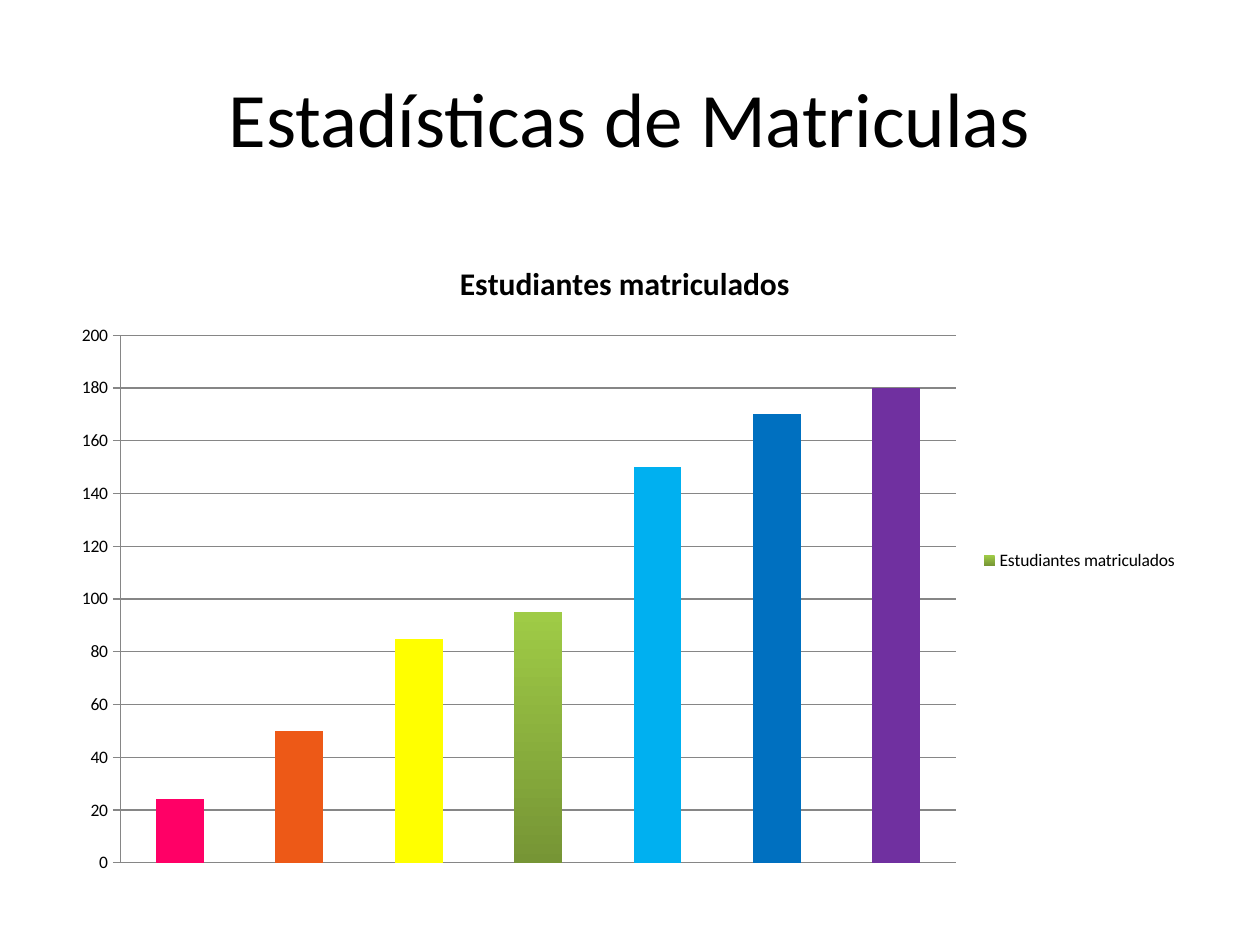
import pptx
import pptx.chart.data
import pptx.dml.color
import pptx.enum.chart
import pptx.enum.text
import pptx.util
from pptx.util import Inches

COLORS = {
    "text": "000000", "grid": "868686",
    "green_top": "9FCB46", "green_bottom": "769535",
    "pink": "FF0066", "orange": "ED5917", "yellow": "FFFF00",
    "sky": "00B0F0", "blue": "0070C0", "purple": "7030A0",
}
FONT = "Calibri"
SERIES = "Estudiantes matriculados"
# Enrolled students and bar colour; None keeps the green gradient of the series
BARS = [(24, "pink"), (50, "orange"), (85, "yellow"), (95, None),
        (150, "sky"), (170, "blue"), (180, "purple")]


def rgb(name):
    return pptx.dml.color.RGBColor.from_string(COLORS[name])


def write(frame, text, size, bold=False, align=pptx.enum.text.PP_ALIGN.CENTER):
    paragraph = frame.paragraphs[0]
    paragraph.alignment = align
    run = paragraph.add_run()
    run.text = text
    run.font.name = FONT
    run.font.size = pptx.util.Pt(size)
    run.font.bold = bold
    run.font.color.rgb = rgb("text")


deck = pptx.Presentation()
deck.slide_width, deck.slide_height = Inches(10), Inches(7.5)
slide = deck.slides.add_slide(deck.slide_layouts[6])

# Heading
heading = slide.shapes.add_textbox(Inches(0.5), Inches(0.3), Inches(9), Inches(1.25)).text_frame
heading.word_wrap = True
heading.vertical_anchor = pptx.enum.text.MSO_ANCHOR.MIDDLE
write(heading, "Estadísticas de Matriculas", 44)

# Enrolment chart
enrolment = pptx.chart.data.CategoryChartData()
enrolment.categories = [str(number) for number in range(1, len(BARS) + 1)]
enrolment.add_series(SERIES, [students for students, _ in BARS])
chart = slide.shapes.add_chart(
    pptx.enum.chart.XL_CHART_TYPE.COLUMN_STACKED,
    Inches(0.47), Inches(1.87), Inches(8.98), Inches(5.16), enrolment).chart
chart.font.name = FONT
chart.font.size = pptx.util.Pt(10)
chart.font.color.rgb = rgb("text")
chart.has_title = True
write(chart.chart_title.text_frame, SERIES, 18, bold=True)
chart.chart_title.include_in_layout = False
chart.has_legend = True
chart.legend.position = pptx.enum.chart.XL_LEGEND_POSITION.RIGHT
chart.legend.include_in_layout = False

# Axes
chart.category_axis.visible = False
students_axis = chart.value_axis
students_axis.minimum_scale, students_axis.maximum_scale = 0, 200
students_axis.major_unit = 20
students_axis.major_tick_mark = pptx.enum.chart.XL_TICK_MARK.CROSS
students_axis.has_major_gridlines = True
for line in (students_axis.format.line, students_axis.major_gridlines.format.line):
    line.color.rgb = rgb("grid")
    line.width = pptx.util.Pt(0.75)

# Bars
plot = chart.plots[0]
plot.vary_by_categories = False
plot.gap_width, plot.overlap = 150, 100
students_series = plot.series[0]
gradient = students_series.format.fill
gradient.gradient()
gradient.gradient_angle = 270
for stop, color in zip(gradient.gradient_stops, ("green_top", "green_bottom")):
    stop.color.rgb = rgb(color)
for index, (_, color) in enumerate(BARS):
    if color:
        bar_fill = students_series.points[index].format.fill
        bar_fill.solid()
        bar_fill.fore_color.rgb = rgb(color)

deck.save("out.pptx")
